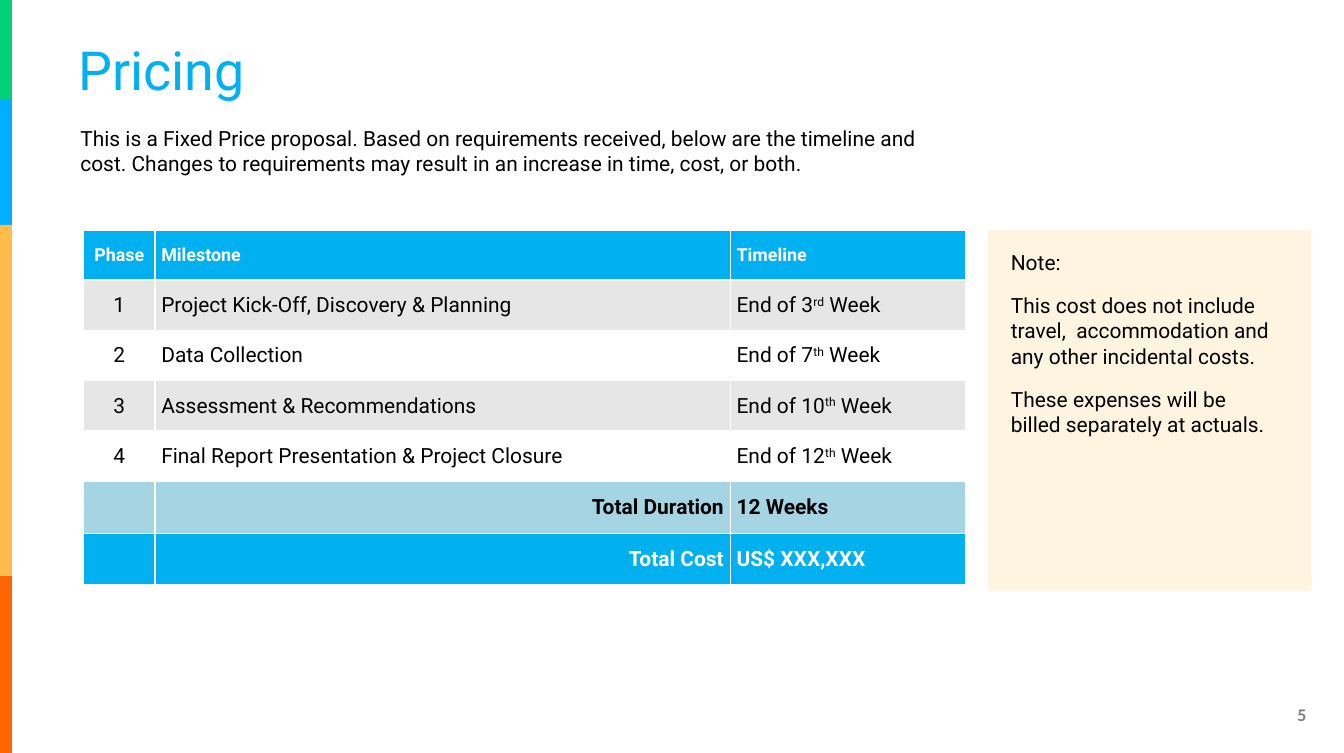
from typing import NamedTuple

from lxml import etree
from pptx import Presentation
from pptx.dml.color import RGBColor
from pptx.enum.shapes import MSO_SHAPE
from pptx.enum.text import MSO_ANCHOR, PP_ALIGN
from pptx.oxml.ns import qn
from pptx.util import Cm, Pt

RECT = MSO_SHAPE.RECTANGLE
TOP, MIDDLE = MSO_ANCHOR.TOP, MSO_ANCHOR.MIDDLE
LEFT, CENTER, RIGHT = PP_ALIGN.LEFT, PP_ALIGN.CENTER, PP_ALIGN.RIGHT

SLIDE_W, SLIDE_H = 31.75, 17.78
BLUE, WHITE, BLACK, GREY = "00B0F0", "FFFFFF", "000000", "E6E6E6"
COLUMN_WIDTHS = (1.68, 13.59, 5.56)
CELL_MARGIN = 0.15


class Box(NamedTuple):
    left: float
    top: float
    width: float
    height: float


class Style(NamedTuple):
    size: int = 14
    color: str = BLACK
    bold: bool = False
    font: str = "Roboto"


class Stripe(NamedTuple):
    color: str
    bottom: float


class Row(NamedTuple):
    cells: tuple[str, str, str]
    fill: str
    height: float = 1.19
    style: Style = Style()
    label_align: PP_ALIGN = LEFT
    ordinal: str = ""


STRIPES = (
    Stripe("02D179", 2.34),
    Stripe("00ADFF", 5.31),
    Stripe("FFBC4D", 13.59),
    Stripe("FD6402", SLIDE_H),
)

ROWS = (
    Row(("Phase", "Milestone", "Timeline"), BLUE, 1.17, Style(12, WHITE, True)),
    Row(("1", "Project Kick-Off, Discovery & Planning", "End of 3"), GREY, ordinal="rd"),
    Row(("2", "Data Collection", "End of 7"), WHITE, ordinal="th"),
    Row(("3", "Assessment & Recommendations", "End of 10"), GREY, ordinal="th"),
    Row(("4", "Final Report Presentation & Project Closure", "End of 12"), WHITE, ordinal="th"),
    Row(("", "Total Duration", "12 Weeks"), "A5D5E2", 1.22, Style(bold=True), RIGHT),
    Row(("", "Total Cost", "US$ XXX,XXX"), "01B0EF", 1.22, Style(14, WHITE, True), RIGHT),
)

INTRO = (
    "This is a Fixed Price proposal. Based on requirements received, below are the "
    "timeline and cost. Changes to requirements may result in an increase in time, "
    "cost, or both."
)
NOTES = (
    "Note:",
    "This cost does not include travel,  accommodation and any other incidental costs.",
    "These expenses will be billed separately at actuals.",
)


def rgb(value: str) -> RGBColor:
    return RGBColor.from_string(value)


def apply_style(p, style: Style, align: PP_ALIGN = LEFT) -> None:
    p.alignment = align
    p.font.name = style.font
    p.font.size = Pt(style.size)
    p.font.bold = style.bold
    p.font.color.rgb = rgb(style.color)


def set_margins(target, margin: float) -> None:
    target.margin_left = target.margin_right = Cm(margin)
    target.margin_top = target.margin_bottom = Cm(margin)


def add_rect(s, box: Box, color: str, opacity: int = 100) -> None:
    """Add a borderless rectangle with its opacity in percent."""
    sp = s.shapes.add_shape(RECT, *map(Cm, box))
    sp.shadow.inherit = False
    sp.line.fill.background()
    sp.fill.solid()
    sp.fill.fore_color.rgb = rgb(color)
    if opacity < 100:
        clr = sp.fill._xPr.find(f".//{qn('a:srgbClr')}")
        etree.SubElement(clr, qn("a:alpha"), val=str(opacity * 1000))


def add_text(s, box: Box, paragraphs: tuple[str, ...], style: Style = Style(),
             align: PP_ALIGN = LEFT, anchor: MSO_ANCHOR = TOP, margin: float = 0.13,
             space_before: int = 0, wrap: bool = True) -> None:
    tf = s.shapes.add_textbox(*map(Cm, box)).text_frame
    tf.word_wrap = wrap
    tf.vertical_anchor = anchor
    set_margins(tf, margin)
    for i, text in enumerate(paragraphs):
        p = tf.paragraphs[0] if i == 0 else tf.add_paragraph()
        p.add_run().text = text
        p.space_before = Pt(space_before)
        apply_style(p, style, align)


def set_borders(cell, color: str, width: int) -> None:
    tc_pr = cell._tc.get_or_add_tcPr()
    for side in ("lnL", "lnR", "lnT", "lnB"):
        ln = etree.SubElement(tc_pr, qn(f"a:{side}"), w=str(Pt(width)))
        fill = etree.SubElement(ln, qn("a:solidFill"))
        etree.SubElement(fill, qn("a:srgbClr"), val=color)


def fill_cell(cell, text: str, row: Row, align: PP_ALIGN, ordinal: str) -> None:
    set_borders(cell, WHITE, 1)
    cell.fill.solid()
    cell.fill.fore_color.rgb = rgb(row.fill)
    cell.vertical_anchor = MIDDLE
    set_margins(cell, CELL_MARGIN)
    p = cell.text_frame.paragraphs[0]
    apply_style(p, row.style, align)
    if text:
        p.add_run().text = text
    if ordinal:
        r = p.add_run()
        r.text = ordinal
        r._r.get_or_add_rPr().set("baseline", "30000")
        p.add_run().text = " Week"


def add_pricing_table(s, left: float, top: float) -> None:
    width, height = sum(COLUMN_WIDTHS), sum(row.height for row in ROWS)
    table = s.shapes.add_table(
        len(ROWS), len(COLUMN_WIDTHS), Cm(left), Cm(top), Cm(width), Cm(height)
    ).table
    for column, column_width in zip(table.columns, COLUMN_WIDTHS):
        column.width = Cm(column_width)
    for i, row in enumerate(ROWS):
        table.rows[i].height = Cm(row.height)
        aligns = (CENTER, row.label_align, LEFT)
        ordinals = ("", "", row.ordinal)
        for j, (text, align, ordinal) in enumerate(zip(row.cells, aligns, ordinals)):
            fill_cell(table.cell(i, j), text, row, align, ordinal)


def main() -> None:
    prs = Presentation()
    prs.slide_width, prs.slide_height = Cm(SLIDE_W), Cm(SLIDE_H)
    s = prs.slides.add_slide(prs.slide_layouts[6])

    top = 0.0
    for stripe in STRIPES:
        add_rect(s, Box(0, top, 0.28, stripe.bottom - top), stripe.color)
        top = stripe.bottom

    add_text(s, Box(30.4, 16.48, 0.71, 0.74), ("5",),
             Style(12, "808080", True, "Calibri"), CENTER, wrap=False)
    add_pricing_table(s, 1.98, 5.44)
    add_text(s, Box(1.75, 2.82, 21.13, 1.52), (INTRO,), margin=0.15, space_before=3)
    add_text(s, Box(1.73, 0.66, 27.86, 1.96), ("Pricing",), Style(36, BLUE), anchor=MIDDLE)
    add_rect(s, Box(23.34, 5.44, 7.65, 8.51), "FFA900", opacity=12)
    add_text(s, Box(23.75, 5.77, 6.48, 4.7), NOTES, space_before=12)

    prs.save("out.pptx")


if __name__ == "__main__":
    main()
